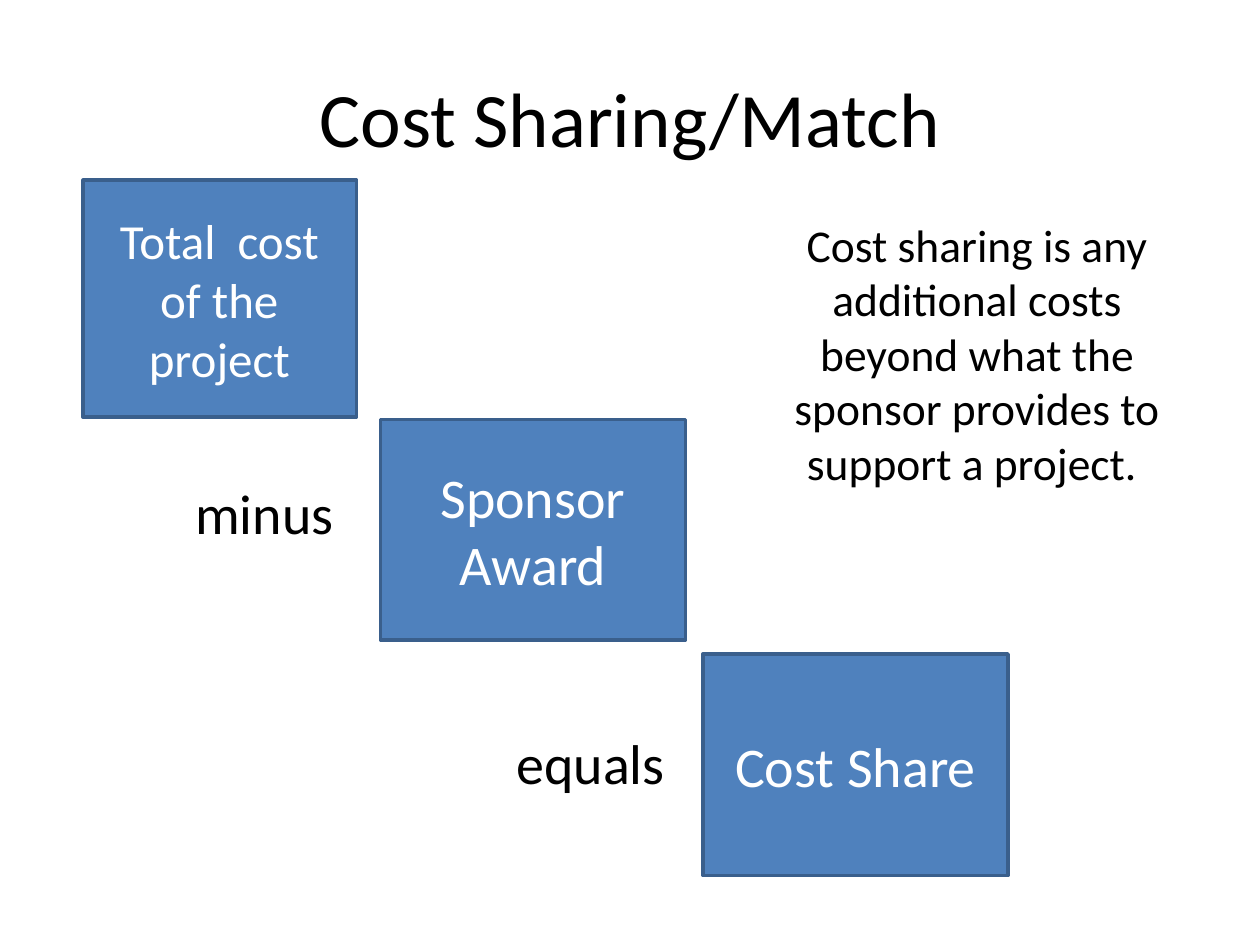
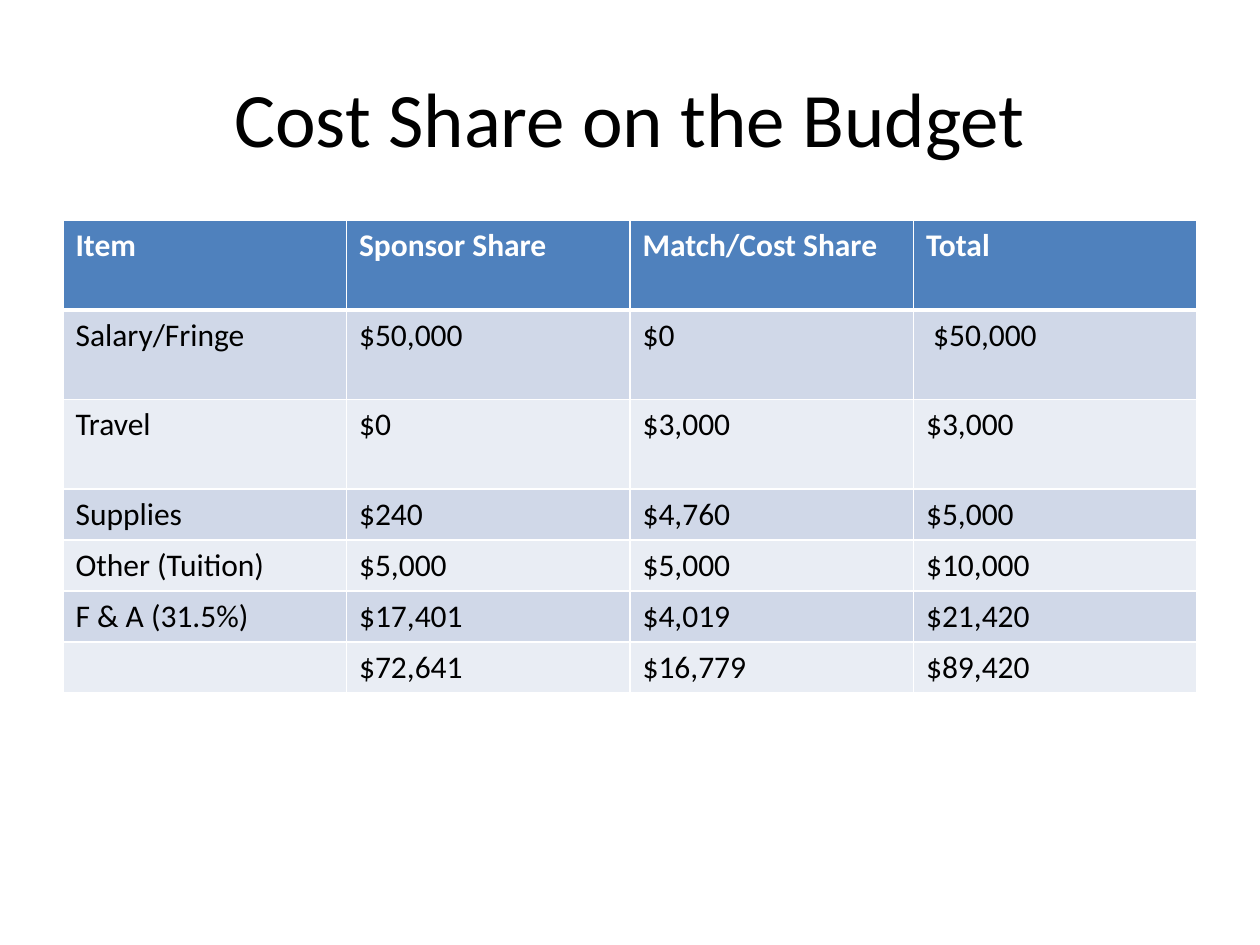
from lxml import etree
from pptx import Presentation
from pptx.dml.color import RGBColor
from pptx.enum.shapes import MSO_SHAPE
from pptx.enum.text import MSO_ANCHOR as ANCHOR, MSO_AUTO_SIZE as AUTO, PP_ALIGN as ALIGN
from pptx.oxml.ns import qn
from pptx.util import Inches, Pt

FONT = "Calibri"
BLUE = RGBColor(0x4F, 0x81, 0xBD)
EDGE = RGBColor(0x3A, 0x5F, 0x8C)
BAND_DARK = RGBColor(0xD0, 0xD8, 0xE8)
BAND_LIGHT = RGBColor(0xE9, 0xED, 0xF4)
WHITE = RGBColor(0xFF, 0xFF, 0xFF)
BLACK = RGBColor(0, 0, 0)

BUDGET = [
    ["Item", "Sponsor Share", "Match/Cost Share", "Total"],
    ["Salary/Fringe", "$50,000", "$0", " $50,000"],
    ["Travel", "$0", "$3,000", "$3,000"],
    ["Supplies", "$240", "$4,760", "$5,000"],
    ["Other (Tuition)", "$5,000", "$5,000", "$10,000"],
    ["F & A (31.5%)", "$17,401", "$4,019", "$21,420"],
    ["", "$72,641", "$16,779", "$89,420"],
]
TALL_ROWS = 3


def write(tf, text, size=18, color=BLACK, bold=False, align=ALIGN.LEFT, before=0):
    """Fill a text frame with one formatted paragraph."""
    tf.word_wrap = True
    p = tf.paragraphs[0]
    p.alignment = align
    p.space_before = Pt(before)
    p.font.size = Pt(size)
    if text:
        r = p.add_run()
        r.text = text
        r.font.name = FONT
        r.font.size = Pt(size)
        r.font.bold = bold
        r.font.color.rgb = color


def add_titled_slide(prs, title):
    """Add a title-only slide with the shared title style."""
    s = prs.slides.add_slide(prs.slide_layouts[5])
    sp = s.shapes.title
    sp.left, sp.top, sp.width, sp.height = map(Inches, (0.5, 0.3, 9, 1.25))
    sp.text_frame.vertical_anchor = ANCHOR.MIDDLE
    write(sp.text_frame, title, size=44, align=ALIGN.CENTER)
    return s


def add_box(s, at, text="", before=0):
    """Add an outlined blue rectangle with centred white text."""
    sp = s.shapes.add_shape(MSO_SHAPE.RECTANGLE, *map(Inches, at))
    sp.shadow.inherit = False
    sp.fill.solid()
    sp.fill.fore_color.rgb = BLUE
    sp.line.color.rgb = EDGE
    sp.line.width = Pt(2)
    sp.text_frame.vertical_anchor = ANCHOR.MIDDLE
    write(sp.text_frame, text, size=32, color=WHITE, align=ALIGN.CENTER, before=before)


def add_label(s, at, text, **fmt):
    """Add a text box that grows with its text."""
    sp = s.shapes.add_textbox(*map(Inches, at))
    write(sp.text_frame, text, **fmt)
    sp.text_frame.auto_size = AUTO.SHAPE_TO_FIT_TEXT


def set_borders(cell, top=1, bottom=1):
    """Draw white borders on the four sides of a cell."""
    tc_pr = cell._tc.get_or_add_tcPr()
    sides = (("lnL", 1), ("lnR", 1), ("lnT", top), ("lnB", bottom))
    for i, (side, width) in enumerate(sides):
        ln = etree.Element(qn(f"a:{side}"), w=str(Pt(width)))
        fill = etree.SubElement(ln, qn("a:solidFill"))
        etree.SubElement(fill, qn("a:srgbClr"), val=str(WHITE))
        tc_pr.insert(i, ln)


def add_budget_table(s, rows):
    """Add the budget table with a blue header and banded rows."""
    heights = [0.71 if i < TALL_ROWS else 0.4 for i in range(len(rows))]
    at = (0.5, 1.75, 9, sum(heights))
    table = s.shapes.add_table(len(rows), len(rows[0]), *map(Inches, at)).table
    for i, row in enumerate(rows):
        table.rows[i].height = Inches(heights[i])
        header = i == 0
        band = BLUE if header else BAND_DARK if i % 2 else BAND_LIGHT
        for j, text in enumerate(row):
            cell = table.cell(i, j)
            cell.fill.solid()
            cell.fill.fore_color.rgb = band
            set_borders(cell, top=3 if i == 1 else 1, bottom=3 if header else 1)
            write(cell.text_frame, text, color=WHITE if header else BLACK, bold=header)


def build_cost_sharing(prs):
    """Build the slide that defines cost sharing."""
    s = add_titled_slide(prs, "Cost Sharing/Match")
    add_box(s, (0.66, 1.43, 2.17, 1.88))
    add_label(s, (0.78, 1.62, 1.92, 1.51), "Total  cost of the project",
              size=28, color=WHITE, align=ALIGN.CENTER)
    add_box(s, (3.02, 3.33, 2.42, 1.75), "Sponsor Award", before=6.4)
    add_box(s, (5.58, 5.19, 2.42, 1.76), "Cost Share")
    add_label(s, (1.45, 3.75, 1.38, 0.64), "minus", size=32)
    add_label(s, (4, 5.73, 1.42, 0.64), "equals", size=32)
    add_label(s, (6.17, 1.67, 3.17, 2.29),
              "Cost sharing is any additional costs beyond what the sponsor "
              "provides to support a project. ", size=26, align=ALIGN.CENTER)


def build_budget(prs):
    """Build the slide with the budget table."""
    s = add_titled_slide(prs, "Cost Share on the Budget")
    add_budget_table(s, BUDGET)


def main():
    """Build and save the presentation."""
    prs = Presentation()
    prs.slide_width, prs.slide_height = Inches(10), Inches(7.5)
    build_cost_sharing(prs)
    build_budget(prs)
    prs.save("out.pptx")


if __name__ == "__main__":
    main()
